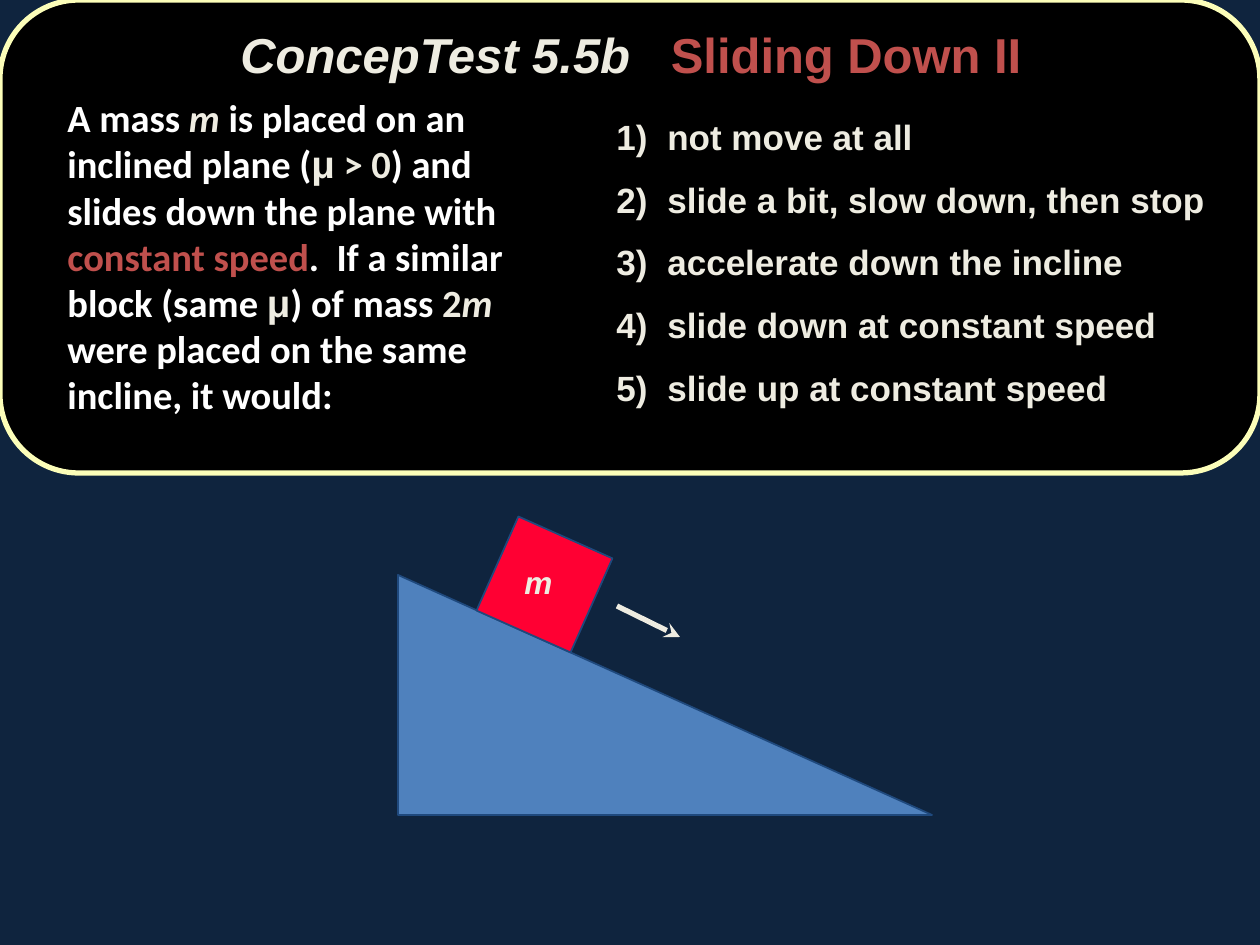
"""Build a physics concept question about a block sliding down an incline."""
from pptx import Presentation
from pptx.dml.color import RGBColor
from pptx.enum.shapes import MSO_CONNECTOR, MSO_SHAPE
from pptx.enum.text import MSO_ANCHOR, PP_ALIGN
from pptx.oxml.ns import qn
from pptx.util import Pt
from lxml.etree import SubElement

NAVY = RGBColor(0x0F, 0x24, 0x3E)
BLACK = RGBColor(0, 0, 0)
YELLOW = RGBColor(0xFC, 0xFE, 0xB9)
BLUE = RGBColor(0x4F, 0x81, 0xBD)
OUTLINE = RGBColor(0x1F, 0x49, 0x7D)
RED = RGBColor(0xFF, 0x00, 0x33)
CREAM = RGBColor(0xEE, 0xEC, 0xE1)
WHITE = RGBColor(0xFF, 0xFF, 0xFF)
BRICK = RGBColor(0xC0, 0x50, 0x4D)
EMU_PER_PX = 914400 / 126
ANSWER_INDENT = 51

PLAIN = {"name": "Calibri", "color": WHITE}
VALUE = {"name": "Calibri", "color": CREAM}
SYMBOL = {"name": "Arial", "color": CREAM}
ACCENT = {"name": "Calibri", "color": BRICK}

TITLE = [
    ("ConcepTest 5.5b   ", {**SYMBOL, "italic": True}),
    ("Sliding Down II", {**SYMBOL, "color": BRICK}),
]
QUESTION = [
    ("A mass ", PLAIN),
    ("m", {**VALUE, "italic": True}),
    (" is placed on an inclined plane (", PLAIN),
    ("μ", SYMBOL),
    (" > 0", VALUE),
    (") and slides down the plane with ", PLAIN),
    ("constant speed", ACCENT),
    (".  If a similar block (same ", PLAIN),
    ("μ", SYMBOL),
    (") of mass ", PLAIN),
    ("2", VALUE),
    ("m", {**VALUE, "italic": True}),
    (" were placed on the same incline, it would:", PLAIN),
]
ANSWERS = [
    "not move at all",
    "slide a bit, slow down, then stop",
    "accelerate down the incline",
    "slide down at constant speed",
    "slide up at constant speed",
]
BLOCK_LABEL = [("m", {**SYMBOL, "italic": True})]


def px(*lengths):
    return [round(length * EMU_PER_PX) for length in lengths]


def add_figure(page, kind, place, fill, line, width):
    figure = page.shapes.add_shape(kind, *px(*place))
    figure.shadow.inherit = False
    figure.fill.solid()
    figure.fill.fore_color.rgb = fill
    figure.line.color.rgb = line
    figure.line.width = Pt(width)
    return figure


def add_text(page, place, paragraphs, size, layout=None, wrap=True, anchor=MSO_ANCHOR.TOP):
    frame = page.shapes.add_textbox(*px(*place)).text_frame
    frame.word_wrap = wrap
    frame.vertical_anchor = anchor
    for index, spans in enumerate(paragraphs):
        para = frame.add_paragraph() if index else frame.paragraphs[0]
        for name, value in (layout or {}).items():
            setattr(para, name, value)
        for text, style in spans:
            span = para.add_run()
            span.text = text
            span.font.color.rgb = style["color"]
            font = {"name": style["name"], "size": Pt(size), "bold": True,
                    "italic": style.get("italic", False)}
            for name, value in font.items():
                setattr(span.font, name, value)
    return frame


def add_arrow(page, ends, color, width):
    arrow = page.shapes.add_connector(MSO_CONNECTOR.STRAIGHT, *px(*ends))
    arrow.line.color.rgb = color
    arrow.line.width = Pt(width)
    SubElement(arrow.line._get_or_add_ln(), qn("a:tailEnd"), type="stealth")
    SubElement(arrow._element.spPr, qn("a:effectLst"))


def main():
    deck = Presentation()
    deck.slide_width, deck.slide_height = px(1260, 945)
    page = deck.slides.add_slide(deck.slide_layouts[6])
    page.background.fill.solid()
    page.background.fill.fore_color.rgb = NAVY

    add_figure(page, MSO_SHAPE.ROUNDED_RECTANGLE, (0, 0, 1260, 473), BLACK, YELLOW, 3)
    add_figure(page, MSO_SHAPE.RIGHT_TRIANGLE, (398, 575, 534, 240), BLUE, OUTLINE, 1)
    block = add_figure(page, MSO_SHAPE.RECTANGLE, (493, 533, 103, 103), RED, OUTLINE, 1)
    block.rotation = 24
    add_text(page, (512, 561, 63, 58), [BLOCK_LABEL], 18, {"line_spacing": 0.9}, wrap=False)
    add_arrow(page, (617, 606, 680, 637), CREAM, 3)

    answers = [[(f"{number})\t{answer}", SYMBOL)] for number, answer in enumerate(ANSWERS, 1)]
    choices = add_text(page, (604, 101, 656, 344), answers, 20,
                       {"line_spacing": 1.2, "space_before": Pt(7)})
    indent, = px(ANSWER_INDENT)
    for para in choices.paragraphs:
        properties = para._p.get_or_add_pPr()
        properties.set("marL", str(indent))
        properties.set("indent", str(-indent))

    add_text(page, (55, 88, 509, 373), [QUESTION], 22)
    add_text(page, (108, 0, 1046, 116), [TITLE], 28,
             {"alignment": PP_ALIGN.CENTER, "line_spacing": 0.9}, anchor=MSO_ANCHOR.MIDDLE)
    deck.save("out.pptx")


if __name__ == "__main__":
    main()
